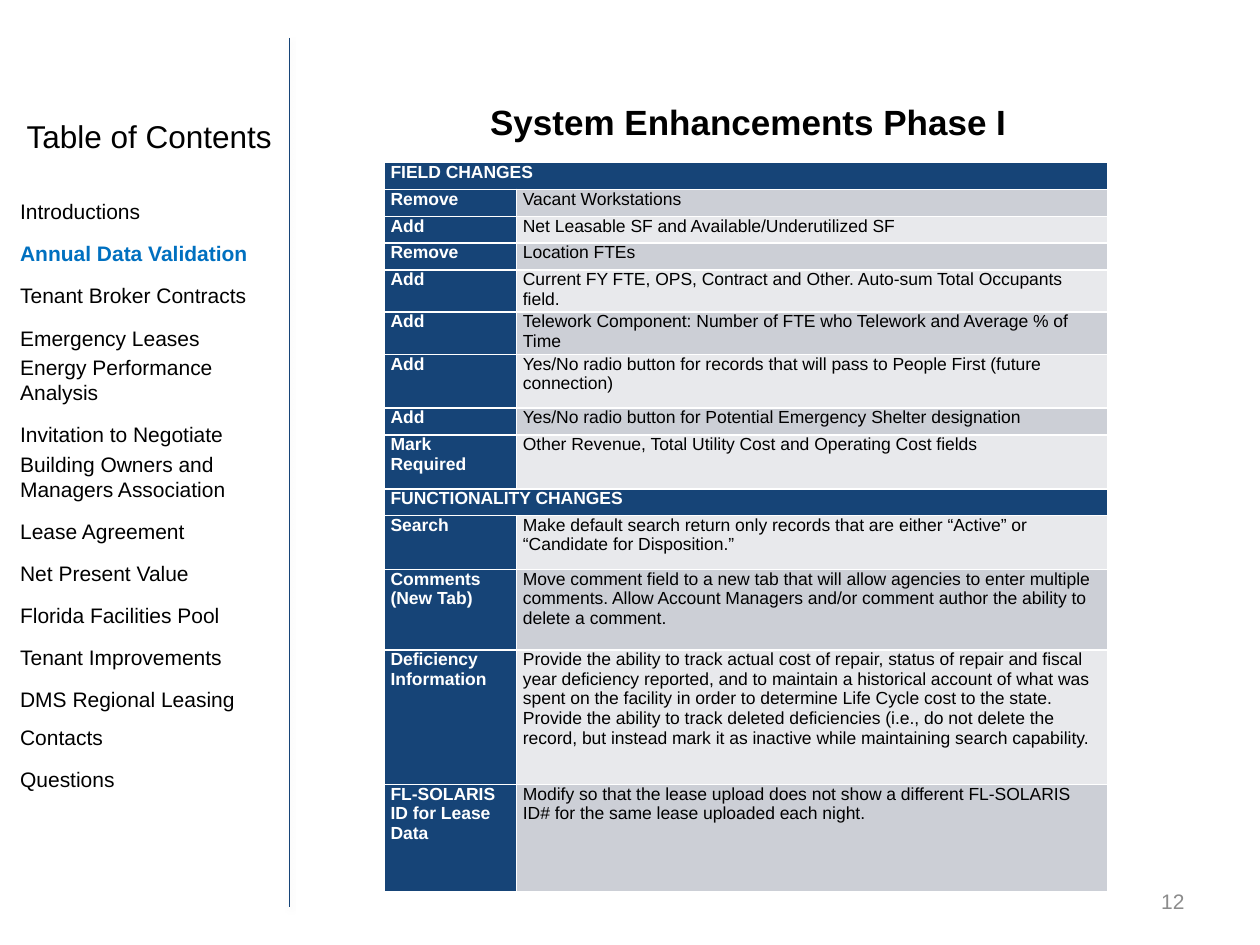
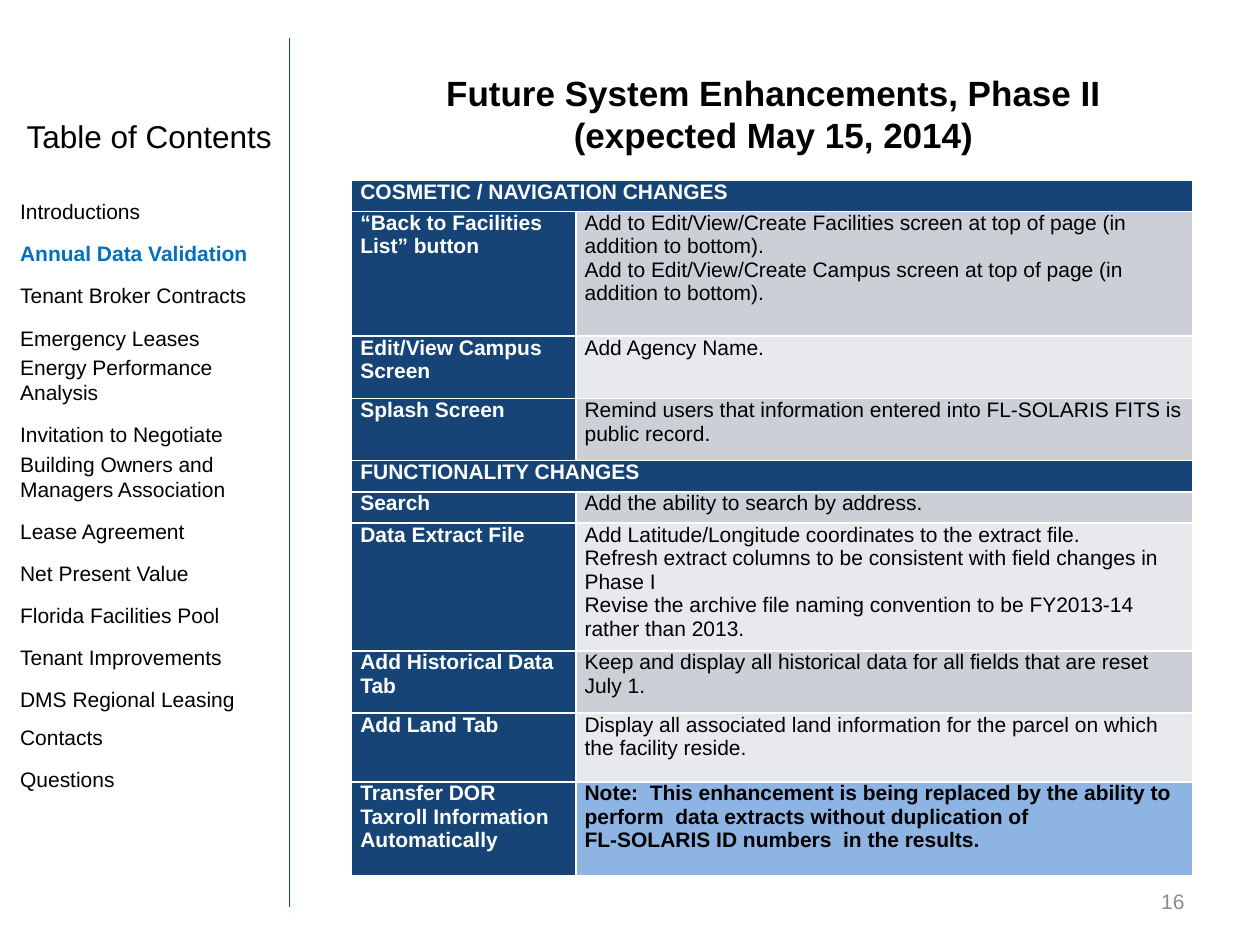
"""Build the two system enhancement slides with their shared contents sidebar."""
from dataclasses import dataclass

import pptx
import pptx.dml.color
import pptx.enum.shapes
import pptx.enum.text
import pptx.oxml
import pptx.util
from pptx.util import Inches

ALIGN = pptx.enum.text.PP_ALIGN
ANCHOR = pptx.enum.text.MSO_ANCHOR


@dataclass(frozen=True)
class Theme:
    font: str = "Arial"
    navy: str = "164477"
    dark_band: str = "CCCFD6"
    light_band: str = "E8E9EC"
    note_band: str = "8EB4E3"
    current: str = "0070C0"
    ink: str = "000000"
    paper: str = "FFFFFF"
    page_grey: str = "8C8C8C"
    title_size: int = 20
    heading_size: int = 18
    body_size: int = 12


THEME = Theme()
WIDTH, HEIGHT = 10, 7.5
CONTENTS_HEADING = "Table of Contents"
CURRENT_TOPIC = "Annual Data Validation"
TOPICS = [
    "Introductions", CURRENT_TOPIC, "Tenant Broker Contracts", "Emergency Leases",
    "Energy Performance Analysis", "Invitation to Negotiate",
    "Building Owners and Managers Association", "Lease Agreement", "Net Present Value",
    "Florida Facilities Pool", "Tenant Improvements", "DMS Regional Leasing Contacts",
    "Questions",
]
SINGLE_SPACED = {"Energy Performance Analysis", "Building Owners and Managers Association"}

PHASE_ONE_ROWS = [
    (1, "FIELD CHANGES"),
    (1, "Remove", "Vacant Workstations"),
    (1, "Add", "Net Leasable SF and Available/Underutilized SF"),
    (1, "Remove", "Location FTEs"),
    (1, "Add", "Current FY FTE, OPS, Contract and Other. Auto-sum Total Occupants field."),
    (1, "Add", "Telework Component: Number of FTE who Telework and Average % of Time"),
    (2, "Add", "Yes/No radio button for records that will pass to People First "
               "(future connection)"),
    (1, "Add", "Yes/No radio button for Potential Emergency Shelter designation"),
    (2, "Mark Required", "Other Revenue, Total Utility Cost and Operating Cost fields"),
    (1, "FUNCTIONALITY CHANGES"),
    (2, "Search", "Make default search return only records that are either “Active” or "
                  "“Candidate for Disposition.”"),
    (3, "Comments\n(New Tab)",
     "Move comment field to a new tab that will allow agencies to enter multiple comments. "
     "Allow Account Managers and/or comment author the ability to delete a comment."),
    (5, "Deficiency Information",
     "Provide the ability to track actual cost of repair, status of repair and fiscal year "
     "deficiency reported, and to maintain a historical account of what was spent on the "
     "facility in order to determine Life Cycle cost to the state. Provide the ability to "
     "track deleted deficiencies (i.e., do not delete the record, but instead mark it as "
     "inactive while maintaining search capability."),
    (4, "FL-SOLARIS ID for Lease Data",
     "Modify so that the lease upload does not show a different FL-SOLARIS ID# for the same "
     "lease uploaded each night."),
]
PHASE_TWO_ROWS = [
    (1, "COSMETIC / NAVIGATION CHANGES"),
    (4, "“Back to Facilities List” button",
     "Add to Edit/View/Create Facilities screen at top of page (in addition to bottom).\n"
     "Add to Edit/View/Create Campus screen at top of page (in addition to bottom)."),
    (2, "Edit/View Campus Screen", "Add Agency Name."),
    (2, "Splash Screen",
     "Remind users that information entered into FL-SOLARIS FITS is public record."),
    (1, "FUNCTIONALITY CHANGES"),
    (1, "Search", "Add the ability to search by address."),
    (4.1, "Data Extract File",
     "Add Latitude/Longitude coordinates to the extract file.\n"
     "Refresh extract columns to be consistent with field changes in Phase I\n"
     "Revise the archive file naming convention to be FY2013-14 rather than 2013."),
    (2, "Add Historical Data Tab",
     "Keep and display all historical data for all fields that are reset July 1."),
    (2.2, "Add Land Tab",
     "Display all associated land information for the parcel on which the facility reside."),
    (3, "Transfer DOR Taxroll Information Automatically",
     "Note:  This enhancement is being replaced by the ability to perform  data extracts "
     "without duplication of\nFL-SOLARIS ID numbers  in the results."),
]
SLIDES = [
    dict(title="System Enhancements Phase I", title_box=(3.11, 0.75, 5.66, 0.44), page=12,
         rows=PHASE_ONE_ROWS, origin=(3.05, 1.29), columns=(1.05, 4.69), height=5.55,
         size=10, inset=0.05),
    dict(title="Future System Enhancements, Phase II\n(expected May 15, 2014)",
         title_box=(2.81, 0.52, 6.66, 0.77), page=16,
         rows=PHASE_TWO_ROWS, origin=(2.79, 1.43), columns=(1.78, 4.9), height=5.52,
         size=12, inset=0.07),
]
LINE_SHADOW = (
    '<a:effectLst xmlns:a="http://schemas.openxmlformats.org/drawingml/2006/main">'
    '<a:outerShdw blurRad="39370" dist="20320" dir="5400000" rotWithShape="0">'
    '<a:srgbClr val="000000"><a:alpha val="38000"/></a:srgbClr>'
    '</a:outerShdw></a:effectLst>'
)


def rgb(value):
    """Turn a hex string into a colour."""
    return pptx.dml.color.RGBColor.from_string(value)


def write(tf, text, size, color=THEME.ink, bold=False, align=ALIGN.LEFT):
    """Fill a text frame and format every run."""
    tf.text = text
    tf.word_wrap = True
    for p in tf.paragraphs:
        p.alignment = align
        for r in p.runs:
            r.font.name = THEME.font
            r.font.size = pptx.util.Pt(size)
            r.font.bold = bold
            r.font.color.rgb = rgb(color)


def add_text(s, box, text, size, **style):
    """Add a wrapped text box and return its frame."""
    tf = s.shapes.add_textbox(*map(Inches, box)).text_frame
    write(tf, text, size, **style)
    return tf


def add_sidebar(s):
    """Draw the divider, the contents heading and the topic list."""
    line = s.shapes.add_connector(
        pptx.enum.shapes.MSO_CONNECTOR.STRAIGHT,
        *map(Inches, (2.3, 0.04 * HEIGHT, 2.3, 0.96 * HEIGHT)))
    line.line.color.rgb = rgb(THEME.navy)
    line.line.width = pptx.util.Pt(0.75)
    line._element.spPr.append(pptx.oxml.parse_xml(LINE_SHADOW))
    add_text(s, (0.07, 0.88, 2.23, 0.4), CONTENTS_HEADING, THEME.heading_size,
             align=ALIGN.CENTER)
    tf = add_text(s, (0, 1.43, 2.28, 5.45), "\n".join(TOPICS), THEME.body_size)
    tf.margin_left = Inches(0.16)
    for i, (p, topic) in enumerate(zip(tf.paragraphs, TOPICS)):
        p.line_spacing = 1.0 if topic in SINGLE_SPACED else 1.5
        p.space_before = pptx.util.Pt(0.2 * THEME.body_size if i else 0)
        if topic == CURRENT_TOPIC:
            p.runs[0].font.bold = True
            p.runs[0].font.color.rgb = rgb(THEME.current)


def add_title(s, text, box):
    """Place and format the title placeholder."""
    title = s.shapes.title
    title.left, title.top, title.width, title.height = map(Inches, box)
    tf = title.text_frame
    write(tf, text, THEME.title_size, bold=True, align=ALIGN.CENTER)
    tf.auto_size = pptx.enum.text.MSO_AUTO_SIZE.NONE
    tf.vertical_anchor = ANCHOR.TOP


def fill_cell(cell, text, fill, spec_, **style):
    """Fill, pad and write one table cell."""
    cell.fill.solid()
    cell.fill.fore_color.rgb = rgb(fill)
    cell.margin_left = cell.margin_right = Inches(spec_["inset"])
    cell.margin_top = cell.margin_bottom = 0
    write(cell.text_frame, text, spec_["size"], **style)


def add_changes(s, page):
    """Build the table of changes, with row heights shared out by weight."""
    rows, columns = page["rows"], page["columns"]
    unit = page["height"] / sum(row[0] for row in rows)
    box = (*page["origin"], sum(columns), page["height"])
    table = s.shapes.add_table(len(rows), len(columns), *map(Inches, box)).table
    for column, width in zip(table.columns, columns):
        column.width = Inches(width)
    for i, (weight, label, *details) in enumerate(rows):
        table.rows[i].height = Inches(weight * unit)
        head, body = table.cell(i, 0), table.cell(i, 1)
        if not details:
            head.merge(body)
        fill_cell(head, label, THEME.navy, page, color=THEME.paper, bold=True)
        for detail in details:
            note = detail.startswith("Note:")
            band = THEME.dark_band if i % 2 else THEME.light_band
            fill_cell(body, detail, THEME.note_band if note else band, page, bold=note)


def main():
    """Create the presentation."""
    prs = pptx.Presentation()
    prs.slide_width, prs.slide_height = Inches(WIDTH), Inches(HEIGHT)
    for page in SLIDES:
        s = prs.slides.add_slide(prs.slide_layouts.get_by_name("Title Only"))
        add_sidebar(s)
        add_title(s, page["title"], page["title_box"])
        add_changes(s, page)
        tf = add_text(s, (7.17, 6.95, 2.33, 0.4), str(page["page"]), THEME.body_size,
                      color=THEME.page_grey, align=ALIGN.RIGHT)
        tf.vertical_anchor = ANCHOR.MIDDLE
    prs.save("out.pptx")


if __name__ == "__main__":
    main()
